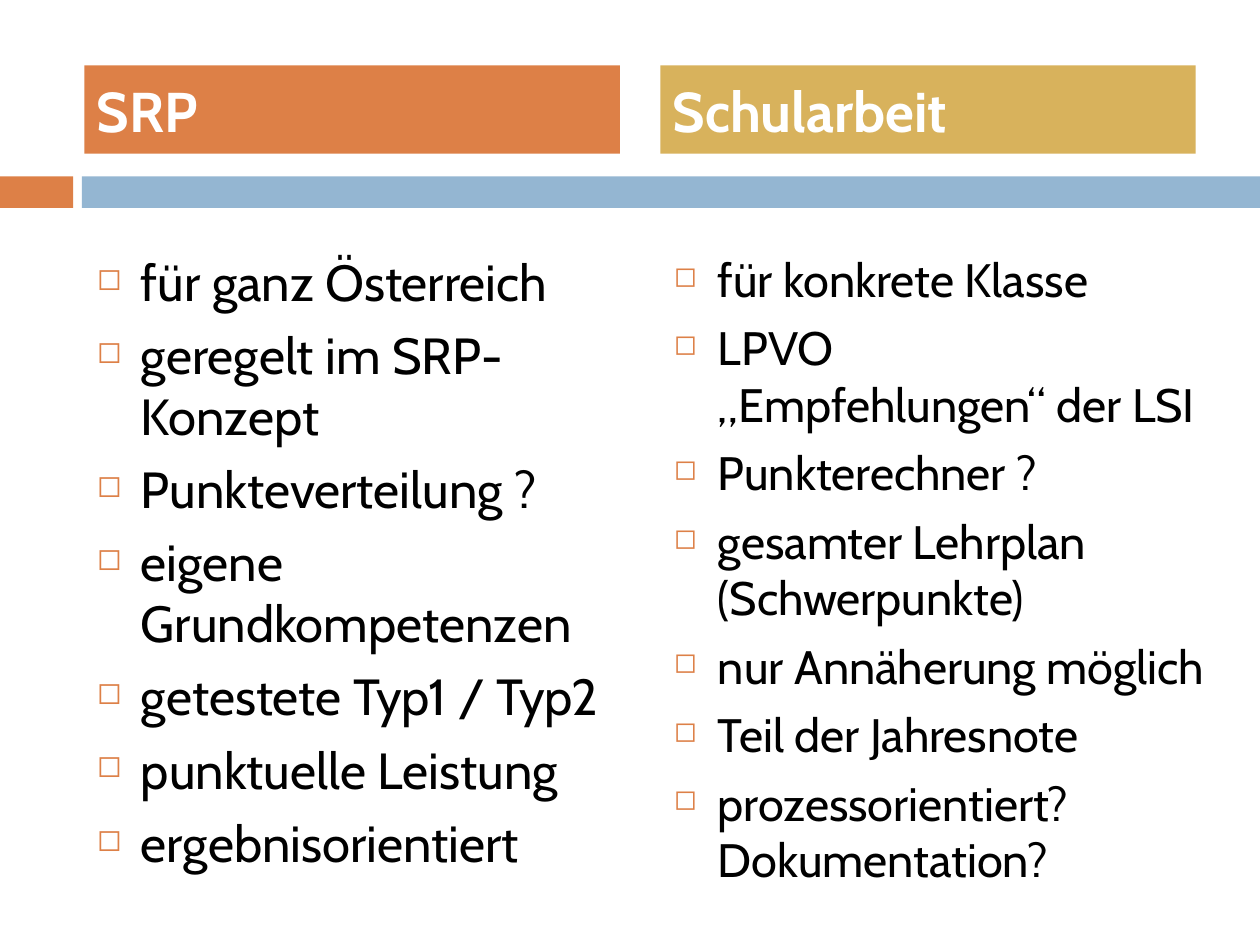
from lxml.etree import SubElement
from pptx import Presentation
from pptx.dml.color import RGBColor
from pptx.enum.shapes import MSO_SHAPE as Shape
from pptx.enum.text import MSO_ANCHOR as Anchor, PP_ALIGN as Align
from pptx.oxml.ns import qn
from pptx.util import Inches, Pt

# Content
COLUMNS = [
    {
        "heading": "SRP", "fill": "orange", "size": 29,
        "heading_left": 0.67, "list_left": 0.67, "list_width": 4.25,
        "points": [
            "für ganz Österreich",
            "geregelt im SRP-Konzept",
            "Punkteverteilung ?",
            "eigene Grundkompetenzen",
            "getestete Typ1 / Typ2",
            "punktuelle Leistung",
            "ergebnisorientiert",
        ],
    },
    {
        "heading": "Schularbeit", "fill": "gold", "size": 26.8,
        "heading_left": 5.24, "list_left": 5.25, "list_width": 4.47,
        "points": [
            "für konkrete Klasse",
            "LPVO\n„Empfehlungen“ der LSI",
            "Punkterechner ?",
            "gesamter Lehrplan (Schwerpunkte)",
            "nur Annäherung möglich",
            "Teil der Jahresnote",
            "prozessorientiert?\nDokumentation?",
        ],
    },
]
BANDS = [("orange", 0, 0.58), ("blue", 0.65, 9.35)]  # fill, left, width

THEME = {
    "font": "Cabin", "heading_size": 32, "space_before": 7,
    "bullet": "◻", "bullet_percent": 60, "indent": 0.35,
    "orange": "DD8047", "blue": "94B6D2", "gold": "D8B25C",
    "white": "FFFFFF", "black": "000000",
}
HEADING_TOP, HEADING_WIDTH, HEADING_HEIGHT = 0.52, 4.25, 0.7
BAND_TOP, BAND_HEIGHT = 1.4, 0.25
LIST_TOP, LIST_HEIGHT = 1.94, 4.96


def color(name):
    return RGBColor.from_string(THEME[name])


def add_bar(slide, fill, left, top, width, height):
    shape = slide.shapes.add_shape(
        Shape.RECTANGLE, *map(Inches, (left, top, width, height)))
    shape.shadow.inherit = False
    shape.fill.solid()
    shape.fill.fore_color.rgb = color(fill)
    shape.line.fill.background()
    return shape


def format_paragraph(paragraph, size, color_name, bold=False):
    paragraph.alignment = Align.LEFT
    paragraph.space_before = Pt(THEME["space_before"])
    for run in paragraph.runs:
        run.font.name = THEME["font"]
        run.font.size = Pt(size)
        run.font.bold = bold
        run.font.color.rgb = color(color_name)


def add_bullet(paragraph):
    properties = paragraph._p.get_or_add_pPr()
    indent = Inches(THEME["indent"])
    properties.set("marL", str(indent))
    properties.set("indent", str(-indent))
    bullet_color = SubElement(properties, qn("a:buClr"))
    SubElement(bullet_color, qn("a:srgbClr"), val=THEME["orange"])
    SubElement(properties, qn("a:buSzPct"), val=str(THEME["bullet_percent"] * 1000))
    SubElement(properties, qn("a:buChar"), char=THEME["bullet"])


def add_heading(slide, column):
    shape = add_bar(slide, column["fill"], column["heading_left"],
                    HEADING_TOP, HEADING_WIDTH, HEADING_HEIGHT)
    frame = shape.text_frame
    frame.text = column["heading"]
    frame.vertical_anchor = Anchor.MIDDLE
    format_paragraph(frame.paragraphs[0], THEME["heading_size"], "white", bold=True)


def add_list(slide, column):
    box = slide.shapes.add_textbox(
        Inches(column["list_left"]), Inches(LIST_TOP),
        Inches(column["list_width"]), Inches(LIST_HEIGHT))
    frame = box.text_frame
    frame.word_wrap = True
    for index, point in enumerate(column["points"]):
        paragraph = frame.add_paragraph() if index else frame.paragraphs[0]
        paragraph.text = point
        format_paragraph(paragraph, column["size"], "black")
        add_bullet(paragraph)


def main():
    presentation = Presentation()
    presentation.slide_width = Inches(10)
    presentation.slide_height = Inches(7.5)
    slide = presentation.slides.add_slide(presentation.slide_layouts[6])

    # Divider bands
    for fill, left, width in BANDS:
        add_bar(slide, fill, left, BAND_TOP, width, BAND_HEIGHT)

    # Compared columns
    for column in COLUMNS:
        add_heading(slide, column)
        add_list(slide, column)

    presentation.save("out.pptx")


if __name__ == "__main__":
    main()
